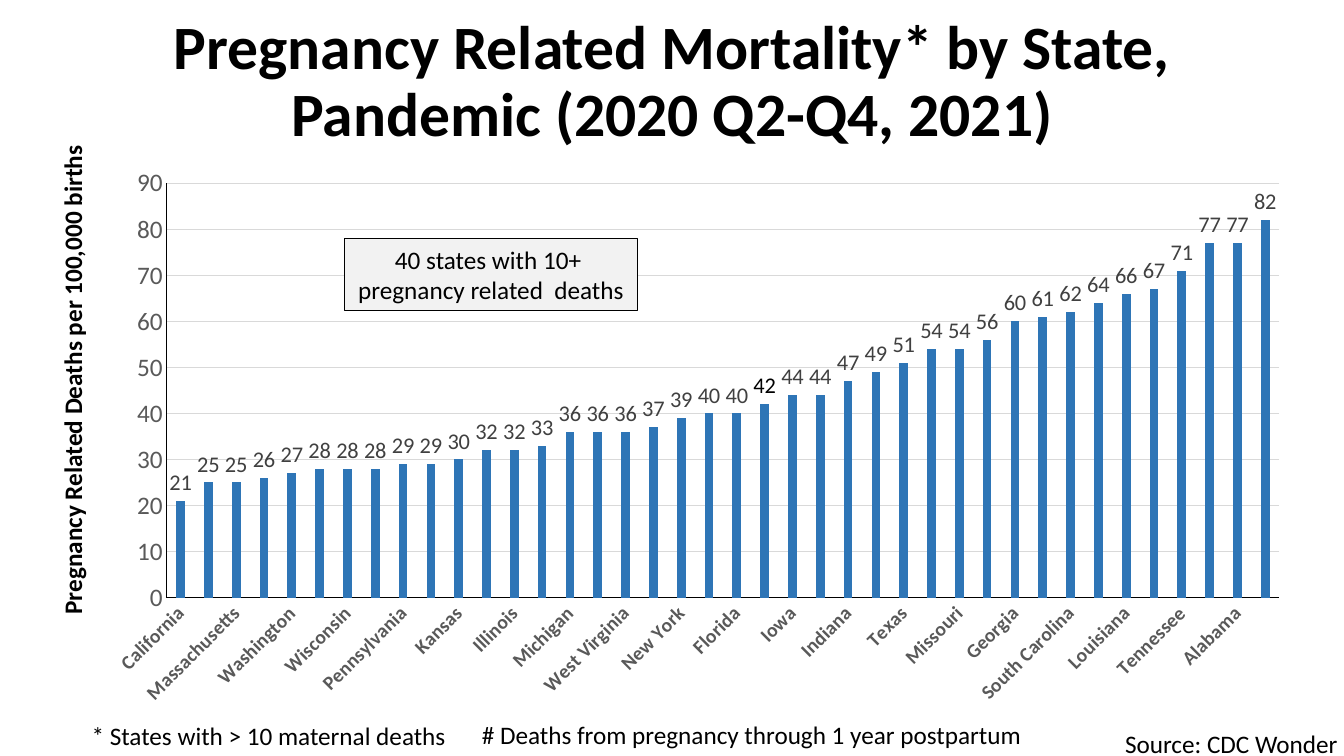
from lxml.etree import SubElement
from pptx import Presentation
from pptx.chart.data import CategoryChartData
from pptx.dml.color import RGBColor
from pptx.enum.chart import XL_CHART_TYPE, XL_LABEL_POSITION, XL_TICK_MARK
from pptx.enum.shapes import MSO_SHAPE
from pptx.enum.text import MSO_ANCHOR, PP_ALIGN
from pptx.oxml import parse_xml
from pptx.oxml.ns import nsdecls, qn
from pptx.util import Pt

PX = 9144  # EMU, 100 px to the inch
FONT = "Calibri"
BLACK = RGBColor(0x00, 0x00, 0x00)
WHITE = RGBColor(0xFF, 0xFF, 0xFF)
BLUE = RGBColor(0x2E, 0x75, 0xB6)
AXIS_GRAY = RGBColor(0x59, 0x59, 0x59)
LABEL_GRAY = RGBColor(0x40, 0x40, 0x40)
GRID_GRAY = RGBColor(0xD9, 0xD9, 0xD9)
BOX_GRAY = RGBColor(0xF2, 0xF2, 0xF2)

DEATH_RATES = {
    "California": 21, "Minnesota": 25, "Massachusetts": 25, "Utah": 26,
    "Washington": 27, "Connecticut": 28, "Wisconsin": 28, "Nebraska": 28,
    "Pennsylvania": 29, "Colorado": 29, "Kansas": 30, "Nevada": 32,
    "Illinois": 32, "Maryland": 33, "Michigan": 36, "Idaho": 36,
    "West Virginia": 36, "Oregon": 37, "New York": 39, "Oklahoma": 40,
    "Florida": 40, "New Jersey": 42, "Iowa": 44, "Ohio": 44,
    "Indiana": 47, "Arizona": 49, "Texas": 51, "Kentucky": 54,
    "Missouri": 54, "Virginia": 56, "Georgia": 60, "South Dakota": 61,
    "South Carolina": 62, "Arkansas": 64, "Louisiana": 66,
    "North Carolina": 67, "Tennessee": 71, "New Mexico": 77,
    "Alabama": 77, "Mississippi": 82,
}


def set_font(font, size=18, color=BLACK, bold=False):
    font.name, font.size, font.bold = FONT, Pt(size), bold
    font.color.rgb = color


def set_line(line, color=BLACK):
    line.color.rgb = color
    line.width = Pt(0.75)


def write(tf, text, align=PP_ALIGN.LEFT, wrap=False, anchor=MSO_ANCHOR.TOP,
          spacing=1.0, **font):
    """Fill a text frame with one paragraph per line of text."""
    tf.word_wrap = wrap
    tf.vertical_anchor = anchor
    for i, line in enumerate(text.split("\n")):
        p = tf.add_paragraph() if i else tf.paragraphs[0]
        p.alignment, p.line_spacing = align, spacing
        r = p.add_run()
        r.text = line
        set_font(r.font, **font)


class SlideBuilder:
    def __init__(self, prs):
        self.slide = prs.slides.add_slide(prs.slide_layouts[6])
        self.slide.background.fill.solid()
        self.slide.background.fill.fore_color.rgb = WHITE

    def text(self, box, text, rotation=0, **style):
        sp = self.slide.shapes.add_textbox(*(n * PX for n in box))
        sp.rotation = rotation
        write(sp.text_frame, text, **style)

    def callout(self, box, text, **style):
        sp = self.slide.shapes.add_shape(MSO_SHAPE.RECTANGLE, *(n * PX for n in box))
        sp.shadow.inherit = False
        sp.fill.solid()
        sp.fill.fore_color.rgb = BOX_GRAY
        set_line(sp.line)
        write(sp.text_frame, text, align=PP_ALIGN.CENTER, **style)

    def column_chart(self, box, values, highlight):
        data = CategoryChartData(number_format="0")
        data.categories = list(values)
        data.add_series("Series 1", list(values.values()))
        frame = self.slide.shapes.add_chart(
            XL_CHART_TYPE.COLUMN_CLUSTERED, *(n * PX for n in box), data)
        chart = frame.chart
        chart.has_legend = chart.has_title = False
        set_font(chart.font, 10)
        self.style_columns(chart.plots[0], list(values).index(highlight))
        self.style_axes(chart)
        self.place_plot(chart, x=0.061, y=0.048, w=0.918, h=0.741)

    def style_columns(self, plot, highlight):
        plot.gap_width, plot.overlap = 219, -27
        plot.vary_by_categories = False
        series = plot.series[0]
        series.format.fill.solid()
        series.format.fill.fore_color.rgb = BLUE
        labels = series.data_labels
        labels.show_value = True
        labels.number_format, labels.number_format_is_linked = "0", False
        labels.position = XL_LABEL_POSITION.OUTSIDE_END
        set_font(labels.font, 16, LABEL_GRAY)
        label = series.points[highlight].data_label
        set_font(label.font, 16)
        label.position = XL_LABEL_POSITION.OUTSIDE_END

    def style_axes(self, chart):
        states, rates = chart.category_axis, chart.value_axis
        for axis in (states, rates):
            axis.major_tick_mark = axis.minor_tick_mark = XL_TICK_MARK.NONE
            set_line(axis.format.line)
        set_font(states.tick_labels.font, 14, AXIS_GRAY, True)
        set_font(rates.tick_labels.font, 18, AXIS_GRAY)
        rates.minimum_scale, rates.maximum_scale, rates.major_unit = 0, 90, 10
        rates.tick_labels.number_format = "0"
        rates.tick_labels.number_format_is_linked = False
        set_line(rates.major_gridlines.format.line, GRID_GRAY)
        # Slanted names, every second state
        cat_ax = chart.element.find(".//" + qn("c:catAx"))
        cat_ax.find(qn("c:txPr")).find(qn("a:bodyPr")).set("rot", "-2700000")
        skip = parse_xml(f'<c:tickLblSkip {nsdecls("c")} val="2"/>')
        cat_ax.find(qn("c:noMultiLvlLbl")).addprevious(skip)

    def place_plot(self, chart, **fractions):
        """Fix the inner plot area as fractions of the chart frame."""
        area = chart.element.find(".//" + qn("c:plotArea"))
        for old in area.findall(qn("c:layout")):
            area.remove(old)
        layout = parse_xml(f'<c:layout {nsdecls("c")}/>')
        manual = SubElement(layout, qn("c:manualLayout"))
        settings = {"layoutTarget": "inner", "xMode": "edge", "yMode": "edge", **fractions}
        for tag, value in settings.items():
            SubElement(manual, qn("c:" + tag)).set("val", str(value))
        area.insert(0, layout)


def main():
    prs = Presentation()
    prs.slide_width, prs.slide_height = 1333 * PX, 750 * PX
    s = SlideBuilder(prs)
    s.text((92, 10, 1150, 145),
           "Pregnancy Related Mortality* by State, Pandemic (2020 Q2-Q4, 2021)",
           align=PP_ALIGN.CENTER, wrap=True, anchor=MSO_ANCHOR.MIDDLE,
           spacing=0.9, size=44, bold=True)
    s.column_chart((92, 155, 1202, 555), DEATH_RATES, highlight="New Jersey")
    s.text((81, 710, 376, 40), "* States with > 10 maternal deaths")
    s.text((-173, 355, 489, 40), "Pregnancy Related Deaths per 100,000 births",
           rotation=270, bold=True)
    s.text((1106, 718, 234, 40), "Source: CDC Wonder")
    s.callout((342, 237, 290, 71), "40 states with 10+ \npregnancy related  deaths")
    s.text((468, 709, 562, 40), "# Deaths from pregnancy through 1 year postpartum")
    prs.save("out.pptx")


if __name__ == "__main__":
    main()
